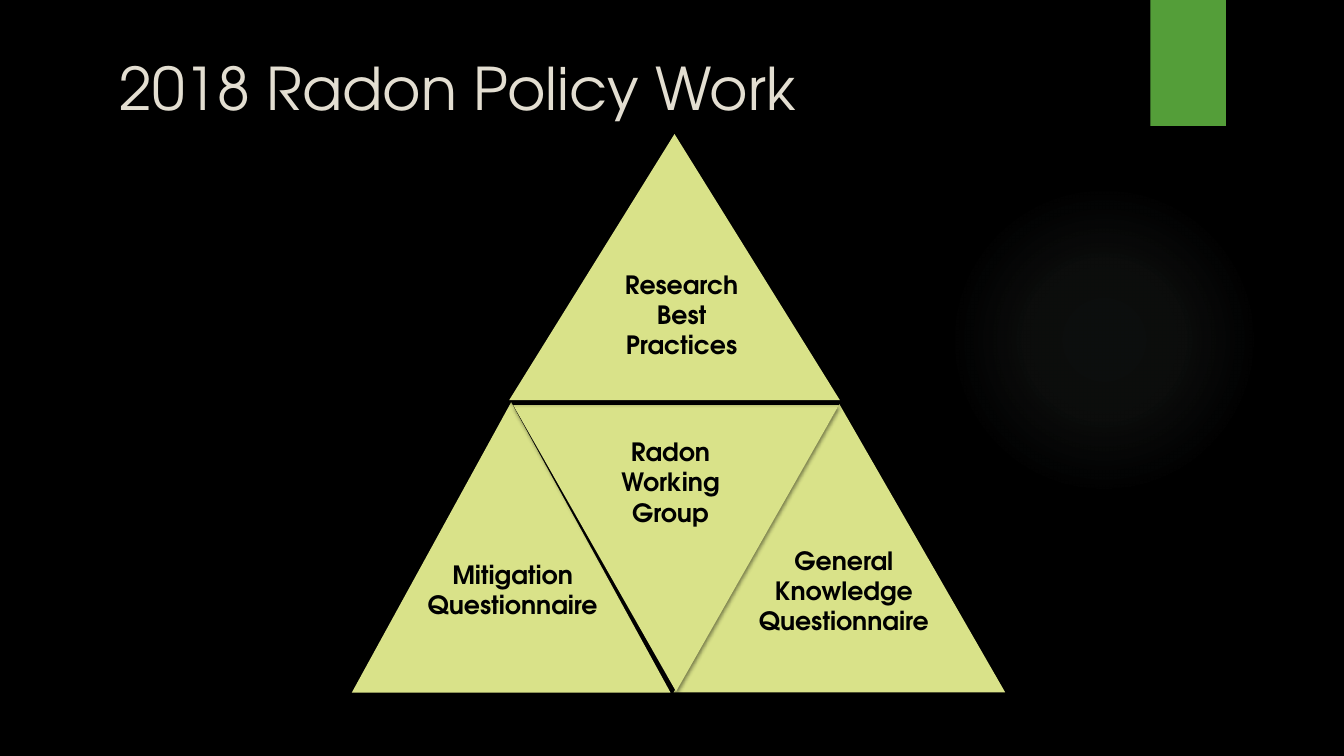
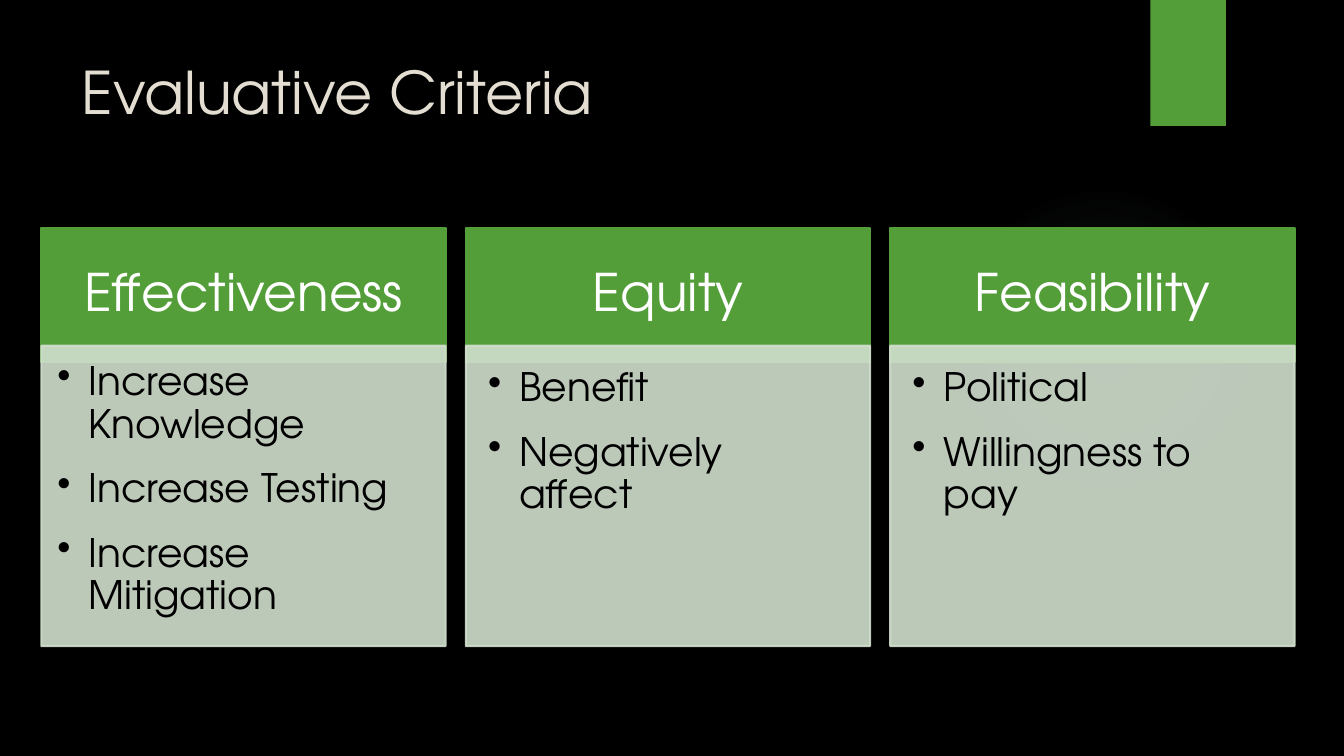
"""Build two radon policy slides: a triangle diagram and three criteria cards."""
from dataclasses import dataclass

import lxml.etree
import pptx
import pptx.dml.color
import pptx.enum.shapes
import pptx.enum.text
import pptx.oxml
import pptx.oxml.ns
import pptx.presentation
import pptx.shapes.autoshape
import pptx.slide
import pptx.text.text
import pptx.util

Inches = pptx.util.Inches
Pt = pptx.util.Pt
RGBColor = pptx.dml.color.RGBColor
MSO_SHAPE = pptx.enum.shapes.MSO_SHAPE
PP_ALIGN = pptx.enum.text.PP_ALIGN
MSO_ANCHOR = pptx.enum.text.MSO_ANCHOR
qn = pptx.oxml.ns.qn

FONT = "TeX Gyre Adventor"
BLACK = RGBColor(0x00, 0x00, 0x00)
WHITE = RGBColor(0xFF, 0xFF, 0xFF)
CREAM = RGBColor(0xE3, 0xDE, 0xD1)
GREEN = RGBColor(0x54, 0x9E, 0x39)
LIME = RGBColor(0xD9, 0xE2, 0x89)
SAGE = RGBColor(0xD1, 0xDF, 0xCE)
GLOW = RGBColor(0xAF, 0xC5, 0xB9)
GLOW_STOPS = ((0, 7), (36, 6), (69, 0))

CARD_LEFT, CARD_WIDTH, CARD_PITCH = 0.41, 4.01, 4.21
HEADER_TOP, HEADER_HEIGHT = 2.26, 1.33
PANEL_TOP, PANEL_HEIGHT = 3.43, 2.98
PANEL_OPACITY = 90


@dataclass(frozen=True)
class Box:
    """A rectangle in inches."""

    left: float
    top: float
    width: float
    height: float

    def emu(self) -> tuple[int, int, int, int]:
        """Return the rectangle as lengths for python-pptx."""
        return Inches(self.left), Inches(self.top), Inches(self.width), Inches(self.height)


@dataclass(frozen=True)
class Triangle:
    """A labelled part of the triangle diagram."""

    outline: Box
    label_box: Box
    lines: tuple[str, ...]
    rotation: float = 0
    anchor: MSO_ANCHOR = MSO_ANCHOR.TOP


@dataclass(frozen=True)
class Criterion:
    """A card with a heading, bullet points and left and top padding."""

    heading: str
    points: tuple[str, ...]
    padding: float = 0.22


TRIANGLES = (
    Triangle(Box(3.49, 3.99, 3.16, 2.88), Box(3.86, 5.53, 2.45, 0.63),
             ("Mitigation", "Questionnaire"), anchor=MSO_ANCHOR.MIDDLE),
    Triangle(Box(6.68, 4.01, 3.29, 2.86), Box(7.28, 5.36, 2.18, 1.01),
             ("General Knowledge Questionnaire",)),
    Triangle(Box(5.09, 4.02, 3.23, 2.84), Box(6.02, 4.28, 1.26, 1.31),
             ("Radon Working Group",), rotation=180),
    Triangle(Box(5.05, 1.33, 3.28, 2.64), Box(6.02, 2.62, 1.48, 1.31),
             ("Research Best Practices",)),
)

CRITERIA = (
    Criterion("Effectiveness",
              ("Increase Knowledge", "Increase Testing", "Increase Mitigation"), 0.16),
    Criterion("Equity", ("Benefit", "Negatively affect")),
    Criterion("Feasibility", ("Political", "Willingness to pay")),
)


def add_filled(slide: pptx.slide.Slide, preset: MSO_SHAPE, box: Box,
               color: RGBColor) -> pptx.shapes.autoshape.Shape:
    """Add a solid preset shape without line or shadow."""
    shape = slide.shapes.add_shape(preset, *box.emu())
    shape.shadow.inherit = False
    shape.fill.solid()
    shape.fill.fore_color.rgb = color
    shape.line.fill.background()
    return shape


def add_shadow(shape: pptx.shapes.autoshape.Shape) -> None:
    """Give a shape a soft shadow below it."""
    effects = shape._element.spPr.find(qn("a:effectLst"))
    shadow = lxml.etree.SubElement(effects, qn("a:outerShdw"), blurRad=str(Pt(3)),
                                   dist=str(Pt(2)), dir="5400000", rotWithShape="0")
    color = lxml.etree.SubElement(shadow, qn("a:srgbClr"), val=str(BLACK))
    lxml.etree.SubElement(color, qn("a:alpha"), val="45000")


def add_glow(slide: pptx.slide.Slide) -> None:
    """Add the faint radial glow on the right."""
    glow = add_filled(slide, MSO_SHAPE.OVAL, Box(9.41, 1.83, 3.08, 3.08), GLOW)
    stops = "".join(
        f'<a:gs pos="{position * 1000}"><a:srgbClr val="{GLOW}">'
        f'<a:alpha val="{opacity * 1000}"/></a:srgbClr></a:gs>'
        for position, opacity in GLOW_STOPS)
    gradient = pptx.oxml.parse_xml(
        '<a:gradFill xmlns:a="http://schemas.openxmlformats.org/drawingml/2006/main">'
        f'<a:gsLst>{stops}</a:gsLst><a:path path="circle">'
        '<a:fillToRect l="50000" t="50000" r="50000" b="50000"/></a:path></a:gradFill>')
    properties = glow._element.spPr
    properties.replace(properties.find(qn("a:solidFill")), gradient)


def style(paragraph: pptx.text.text._Paragraph, size: float, color: RGBColor,
          bold: bool = False) -> None:
    """Set the font of a paragraph."""
    paragraph.font.name = FONT
    paragraph.font.size = Pt(size)
    paragraph.font.bold = bold
    paragraph.font.color.rgb = color


def add_text(slide: pptx.slide.Slide, box: Box, lines: tuple[str, ...], size: float,
             color: RGBColor, bold: bool = False, align: PP_ALIGN = PP_ALIGN.LEFT,
             anchor: MSO_ANCHOR = MSO_ANCHOR.TOP) -> None:
    """Add a wrapping text box with one paragraph a line."""
    frame = slide.shapes.add_textbox(*box.emu()).text_frame
    frame.word_wrap = True
    frame.vertical_anchor = anchor
    frame.text = "\n".join(lines)
    for paragraph in frame.paragraphs:
        paragraph.alignment = align
        style(paragraph, size, color, bold)


def add_slide(deck: pptx.presentation.Presentation, title: str,
              title_box: Box) -> pptx.slide.Slide:
    """Add a black slide with the glow, the green tab and a title."""
    slide = deck.slides.add_slide(deck.slide_layouts[6])
    slide.background.fill.solid()
    slide.background.fill.fore_color.rgb = BLACK
    add_glow(slide)
    add_shadow(add_filled(slide, MSO_SHAPE.RECTANGLE, Box(11.41, 0, 0.75, 1.25), GREEN))
    add_text(slide, title_box, (title,), 42, CREAM)
    return slide


def add_triangle(slide: pptx.slide.Slide, triangle: Triangle) -> None:
    """Draw one triangle and its label."""
    shape = add_filled(slide, MSO_SHAPE.ISOSCELES_TRIANGLE, triangle.outline, LIME)
    shape.rotation = triangle.rotation
    add_shadow(shape)
    add_text(slide, triangle.label_box, triangle.lines, 18, BLACK, bold=True,
             align=PP_ALIGN.CENTER, anchor=triangle.anchor)


def add_card_part(slide: pptx.slide.Slide, box: Box, color: RGBColor,
                  insets: tuple[float, float, float, float],
                  anchor: MSO_ANCHOR) -> pptx.shapes.autoshape.Shape:
    """Add an outlined block of a card, ready for text."""
    part = add_filled(slide, MSO_SHAPE.RECTANGLE, box, color)
    part.line.color.rgb = color
    part.line.width = Pt(1.5)
    frame = part.text_frame
    frame.word_wrap = True
    frame.vertical_anchor = anchor
    (frame.margin_left, frame.margin_top,
     frame.margin_right, frame.margin_bottom) = map(Inches, insets)
    return part


def add_card(slide: pptx.slide.Slide, criterion: Criterion, left: float) -> None:
    """Draw a heading block and the bullet panel below it."""
    header = add_card_part(slide, Box(left, HEADER_TOP, CARD_WIDTH, HEADER_HEIGHT), GREEN,
                           (0.29, 0.16, 0.29, 0.16), MSO_ANCHOR.MIDDLE)
    header.text_frame.text = criterion.heading
    heading = header.text_frame.paragraphs[0]
    heading.alignment = PP_ALIGN.CENTER
    heading.line_spacing = 0.9
    style(heading, 37, WHITE)

    pad = criterion.padding
    panel = add_card_part(slide, Box(left, PANEL_TOP, CARD_WIDTH, PANEL_HEIGHT), SAGE,
                          (pad, pad, pad + 0.07, pad + 0.09), MSO_ANCHOR.TOP)
    for color in panel._element.spPr.iter(qn("a:srgbClr")):
        lxml.etree.SubElement(color, qn("a:alpha"), val=str(PANEL_OPACITY * 1000))
    panel.text_frame.text = "\n".join(criterion.points)
    for index, point in enumerate(panel.text_frame.paragraphs):
        properties = point._p.get_or_add_pPr()
        properties.set("marL", str(Inches(0.31)))
        properties.set("indent", str(Inches(-0.31)))
        lxml.etree.SubElement(properties, qn("a:buChar"), char="•")
        point.alignment = PP_ALIGN.LEFT
        point.line_spacing = 0.9
        point.space_before = Pt(12 if index else 0)
        point.space_after = Pt(4)
        style(point, 28, BLACK)


def main() -> None:
    """Build and save the deck."""
    deck = pptx.Presentation()
    deck.slide_width, deck.slide_height = Inches(13.33), Inches(7.5)

    policy = add_slide(deck, "2018 Radon Policy Work", Box(1.09, 0.46, 12.14, 0.75))
    for triangle in TRIANGLES:
        add_triangle(policy, triangle)

    criteria = add_slide(deck, "Evaluative Criteria", Box(0.71, 0.5, 10.29, 1.53))
    for column, criterion in enumerate(CRITERIA):
        add_card(criteria, criterion, CARD_LEFT + column * CARD_PITCH)

    deck.save("out.pptx")


if __name__ == "__main__":
    main()
